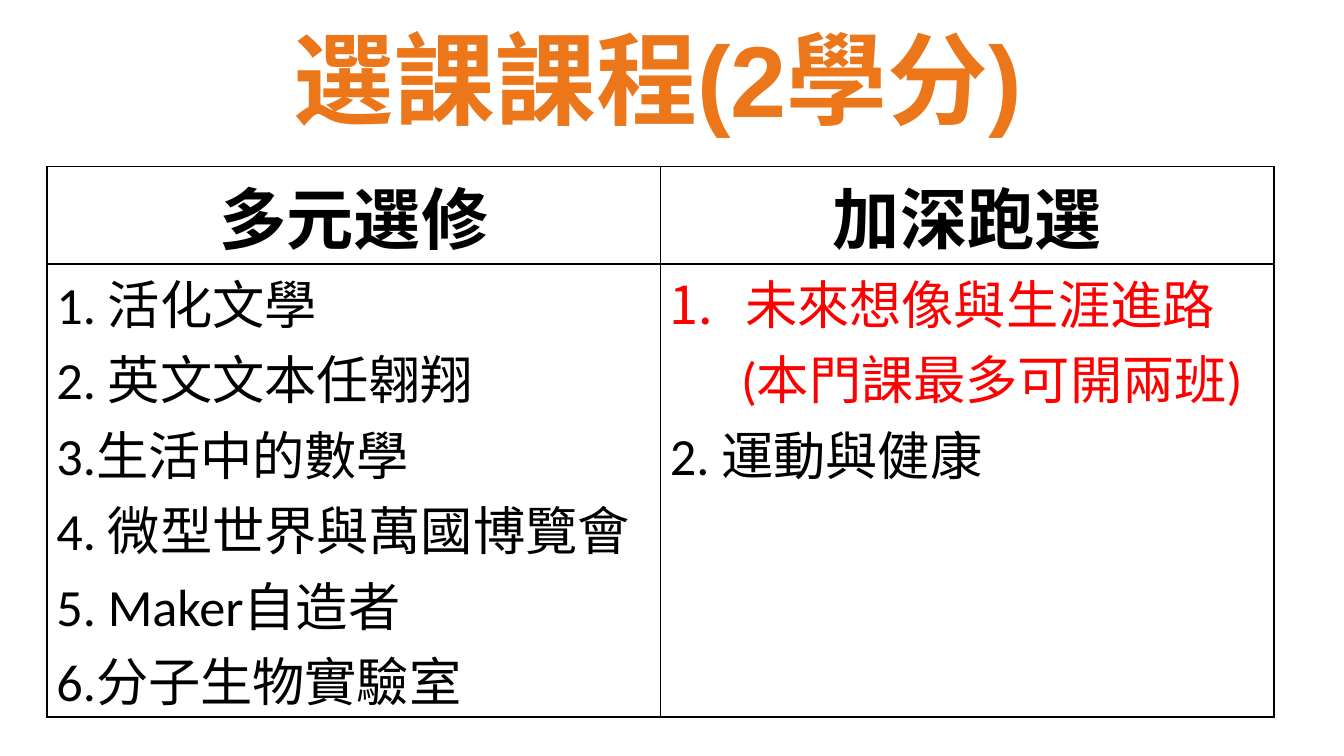
from dataclasses import dataclass

from lxml.etree import SubElement
from pptx import Presentation
from pptx.dml.color import RGBColor as Color
from pptx.enum.text import MSO_ANCHOR as Anchor, MSO_AUTO_SIZE as AutoSize, PP_ALIGN as Align
from pptx.oxml.ns import qn
from pptx.util import Inches, Pt


@dataclass(frozen=True)
class Theme:
    orange: str = "EC771B"
    black: str = "000000"
    red: str = "FF0000"
    title_font: str = "Arial"
    table_font: str = "Calibri"
    title_size: int = 54
    header_size: int = 36
    course_size: int = 28
    border_width: int = 1


THEME = Theme()
TITLE = "選課課程(2學分) "
COLUMNS = [
    ("多元選修", [
        {"text": "1. 活化文學"},
        {"text": "2. 英文文本任翱翔"},
        {"text": "3.生活中的數學"},
        {"text": "4. 微型世界與萬國博覽會"},
        {"text": "5. Maker自造者"},
        {"text": "6.分子生物實驗室"},
    ]),
    ("加深跑選", [
        {"text": "未來想像與生涯進路", "color": THEME.red,
         "margin": 0.56, "indent": -0.56, "numbered": True},
        {"text": "(本門課最多可開兩班)", "color": THEME.red, "indent": 0.53},
        {"text": "2. 運動與健康"},
    ]),
]
SLIDE_WIDTH = 10
SLIDE_HEIGHT = SLIDE_WIDTH * 9 / 16
TABLE_LEFT, TABLE_TOP, TABLE_WIDTH = 0.35, 1.24, 9.13
ROW_HEIGHTS = [0.56, 3.03]
CELL_MARGIN = 0.07


def write(para, text, size=THEME.course_size, color=THEME.black, font=THEME.table_font,
          bold=False, align=Align.LEFT, margin=0, indent=0, numbered=False):
    para.alignment = align
    if margin or indent:
        properties = para._p.get_or_add_pPr()
        properties.set("marL", str(Inches(margin)))
        properties.set("indent", str(Inches(indent)))
        if numbered:
            SubElement(properties, qn("a:buFont"), typeface="+mj-lt")
            SubElement(properties, qn("a:buAutoNum"), type="arabicPeriod")
    span = para.add_run()
    span.text = text
    span.font.size = Pt(size)
    span.font.name = font
    span.font.bold = bold
    span.font.color.rgb = Color.from_string(color)


def add_borders(cell):
    properties = cell._tc.get_or_add_tcPr()
    for position, side in enumerate(("lnL", "lnR", "lnT", "lnB")):
        line = properties.makeelement(qn(f"a:{side}"), {"w": str(Pt(THEME.border_width))})
        fill = SubElement(line, qn("a:solidFill"))
        SubElement(fill, qn("a:srgbClr"), val=THEME.black)
        properties.insert(position, line)


def fill_cell(cell, entries):
    cell.margin_left = cell.margin_right = Inches(CELL_MARGIN)
    cell.margin_top = cell.margin_bottom = 0
    cell.fill.background()
    add_borders(cell)
    frame = cell.text_frame
    for number, entry in enumerate(entries):
        para = frame.add_paragraph() if number else frame.paragraphs[0]
        write(para, **entry)


def add_title(page):
    title = page.shapes.title
    title.left, title.top = 0, Inches(0.14)
    title.width, title.height = Inches(SLIDE_WIDTH), Inches(0.87)
    frame = title.text_frame
    frame.auto_size = AutoSize.NONE
    frame.vertical_anchor = Anchor.MIDDLE
    write(frame.paragraphs[0], TITLE, size=THEME.title_size, color=THEME.orange,
          font=THEME.title_font, bold=True, align=Align.CENTER)


def add_courses(page):
    table = page.shapes.add_table(
        len(ROW_HEIGHTS), len(COLUMNS), Inches(TABLE_LEFT), Inches(TABLE_TOP),
        Inches(TABLE_WIDTH), Inches(sum(ROW_HEIGHTS))).table
    table.first_row = table.horz_banding = False
    for row, height in zip(table.rows, ROW_HEIGHTS):
        row.height = Inches(height)
    for column, (heading, courses) in enumerate(COLUMNS):
        header = {"text": heading, "size": THEME.header_size, "bold": True, "align": Align.CENTER}
        fill_cell(table.cell(0, column), [header])
        fill_cell(table.cell(1, column), courses)


def main():
    deck = Presentation()
    deck.slide_width, deck.slide_height = Inches(SLIDE_WIDTH), Inches(SLIDE_HEIGHT)
    page = deck.slides.add_slide(deck.slide_layouts.get_by_name("Title Only"))
    add_title(page)
    add_courses(page)
    deck.save("out.pptx")


if __name__ == "__main__":
    main()
